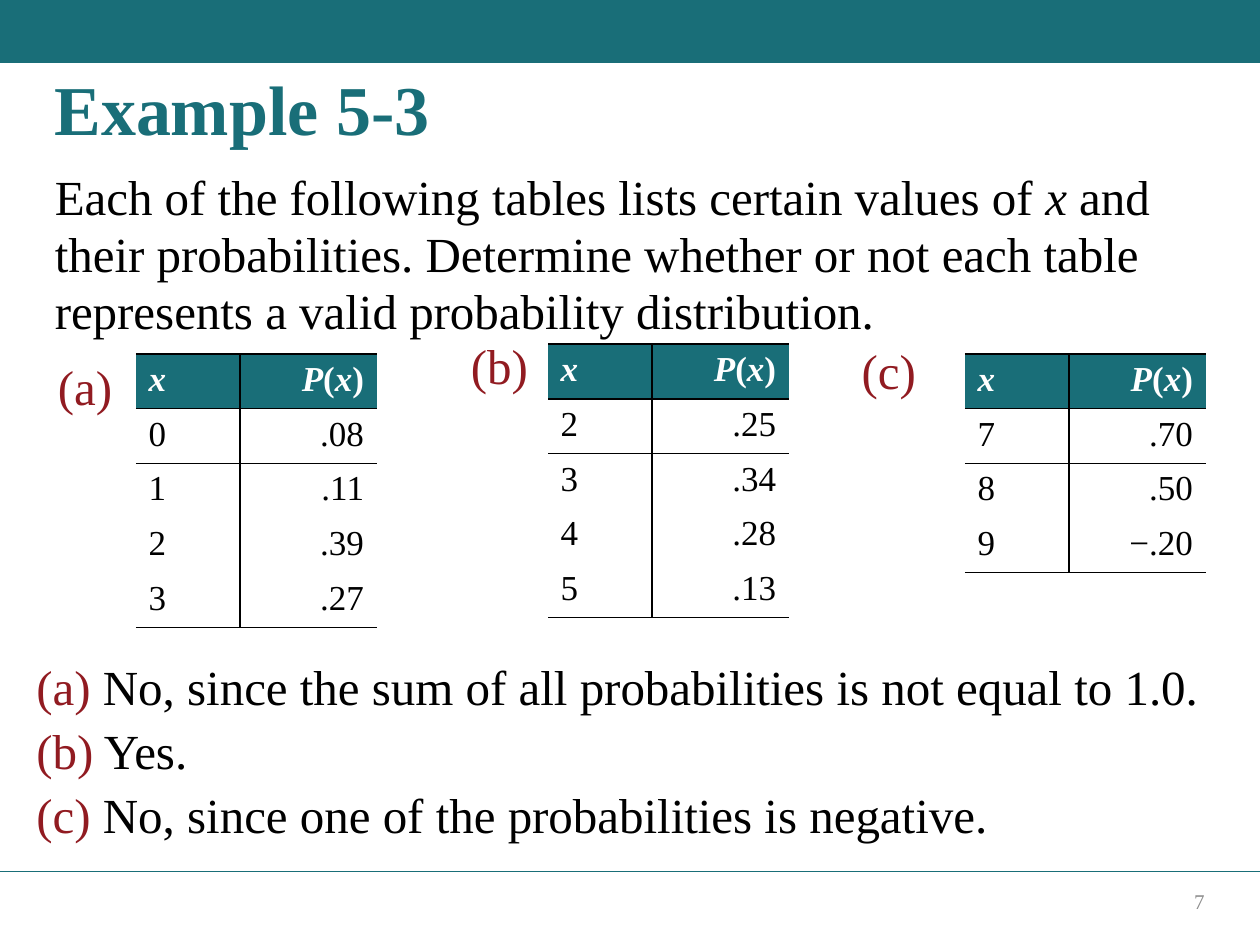
from dataclasses import dataclass

import pptx
import pptx.dml.color
import pptx.enum.shapes
import pptx.enum.text
import pptx.oxml
import pptx.oxml.ns
import pptx.oxml.xmlchemy
import pptx.util

Pt = pptx.util.Pt
RGBColor = pptx.dml.color.RGBColor
PP_ALIGN = pptx.enum.text.PP_ALIGN
MSO_ANCHOR = pptx.enum.text.MSO_ANCHOR

TEAL = RGBColor(0x19, 0x6E, 0x78)
RED = RGBColor(0x91, 0x1B, 0x21)
BLACK = RGBColor(0, 0, 0)
WHITE = RGBColor(0xFF, 0xFF, 0xFF)
GRAY = RGBColor(0x8C, 0x8C, 0x8C)
FONT = "Times New Roman"
COLUMN_WIDTHS = (59.5, 78)
ROW_HEIGHT = 29.4


@dataclass
class Run:
    text: str
    size: float = 28
    color: RGBColor = BLACK
    bold: bool = False
    italic: bool = False


@dataclass
class Box:
    left: float
    top: float
    width: float
    height: float


@dataclass
class Distribution:
    label: str
    label_box: Box
    left: float
    top: float
    rows: list[tuple[str, str]]


DISTRIBUTIONS = [
    Distribution("(a)", Box(26, 202.3, 49, 34.6), 77.7, 202.3,
                 [("0", ".08"), ("1", ".11"), ("2", ".39"), ("3", ".27")]),
    Distribution("(b)", Box(262, 190, 51, 37.4), 313.2, 196.7,
                 [("2", ".25"), ("3", ".34"), ("4", ".28"), ("5", ".13")]),
    Distribution("(c)", Box(485.3, 193, 46.8, 36), 551.4, 202.3,
                 [("7", ".70"), ("8", ".50"), ("9", "−.20")]),
]
ANSWERS = [
    ("(a)", " No, since the sum of all probabilities is not equal to 1.0."),
    ("(b)", " Yes."),
    ("(c)", " No, since one of the probabilities is negative."),
]


def add_runs(p, runs: list[Run]) -> None:
    for run in runs:
        r = p.add_run()
        r.text = run.text
        r.font.name = FONT
        r.font.size = Pt(run.size)
        r.font.bold = run.bold
        r.font.italic = run.italic
        r.font.color.rgb = run.color


def add_text(s, box: Box, paragraphs: list[list[Run]], spacing: float = 0.97,
             align=PP_ALIGN.LEFT, anchor=MSO_ANCHOR.TOP) -> None:
    sp = s.shapes.add_textbox(Pt(box.left), Pt(box.top), Pt(box.width), Pt(box.height))
    tf = sp.text_frame
    tf.word_wrap = True
    tf.vertical_anchor = anchor
    for i, runs in enumerate(paragraphs):
        p = tf.add_paragraph() if i else tf.paragraphs[0]
        p.alignment = align
        p.line_spacing = spacing
        add_runs(p, runs)


def set_borders(cell, visible: set[str]) -> None:
    tc_pr = cell._tc.get_or_add_tcPr()
    ns = pptx.oxml.ns.nsdecls("a")
    for i, side in enumerate(("lnL", "lnR", "lnT", "lnB")):
        paint = (f'<a:solidFill><a:srgbClr val="{BLACK}"/></a:solidFill>'
                 if side in visible else "<a:noFill/>")
        ln = pptx.oxml.parse_xml(f'<a:{side} {ns} w="{int(Pt(1))}">{paint}</a:{side}>')
        tc_pr.insert(i, ln)


def add_distribution(s, dist: Distribution) -> None:
    add_text(s, dist.label_box, [[Run(dist.label, color=RED)]])
    count = len(dist.rows) + 1
    table = s.shapes.add_table(
        count, 2, Pt(dist.left), Pt(dist.top),
        Pt(sum(COLUMN_WIDTHS)), Pt(ROW_HEIGHT * count)).table
    for column, width in zip(table.columns, COLUMN_WIDTHS):
        column.width = Pt(width)
    for row in table.rows:
        row.height = Pt(ROW_HEIGHT)
    x = Run("x", 20, WHITE, True, True)
    header = [[x], [Run("P", 20, WHITE, True, True), Run("(", 20, WHITE, True),
                    x, Run(")", 20, WHITE, True)]]
    body = [[[Run(value, 20)] for value in row] for row in dist.rows]
    for i, row in enumerate([header] + body):
        for j, runs in enumerate(row):
            cell = table.cell(i, j)
            if i == 0:
                cell.fill.solid()
                cell.fill.fore_color.rgb = TEAL
            else:
                cell.fill.background()
            p = cell.text_frame.paragraphs[0]
            p.alignment = PP_ALIGN.RIGHT if j else PP_ALIGN.LEFT
            add_runs(p, runs)
            sides = {"lnL" if j else "lnR"}
            if i <= 2:
                sides.add("lnT")
            if i <= 1 or i == count - 1:
                sides.add("lnB")
            set_borders(cell, sides)


def add_frame(s) -> None:
    sp = s.shapes.add_shape(
        pptx.enum.shapes.MSO_SHAPE.RECTANGLE, Pt(0), Pt(0), Pt(720), Pt(36))
    sp.shadow.inherit = False
    sp.fill.solid()
    sp.fill.fore_color.rgb = TEAL
    sp.line.fill.background()
    rule = s.shapes.add_connector(
        pptx.enum.shapes.MSO_CONNECTOR.STRAIGHT, Pt(0), Pt(498), Pt(720), Pt(498))
    rule.line.color.rgb = TEAL
    rule.line.width = Pt(1)
    rule._element.spPr.append(
        pptx.oxml.parse_xml(f'<a:effectLst {pptx.oxml.ns.nsdecls("a")}/>'))


def main() -> None:
    prs = pptx.Presentation()
    prs.slide_width, prs.slide_height = Pt(720), Pt(540)
    s = prs.slides.add_slide(prs.slide_layouts[6])
    add_frame(s)
    add_text(s, Box(24, 36.7, 672, 66), [[Run("Example 5-3", 40, TEAL, True)]])
    add_text(s, Box(24.2, 93.6, 672, 98.6), [[
        Run("Each of the following tables lists certain values of "),
        Run("x", italic=True),
        Run(" and their probabilities. Determine whether or not each table "
            "represents a valid probability distribution."),
    ]])
    for dist in DISTRIBUTIONS:
        add_distribution(s, dist)
    add_text(s, Box(508.3, 500.4, 187.2, 28.8), [[Run("7", 12, GRAY)]], 1.0,
             PP_ALIGN.RIGHT, MSO_ANCHOR.MIDDLE)
    add_text(s, Box(13.7, 368.6, 682.6, 108.7),
             [[Run(label, color=RED), Run(answer)] for label, answer in ANSWERS], 1.09)
    prs.save("out.pptx")


if __name__ == "__main__":
    main()
